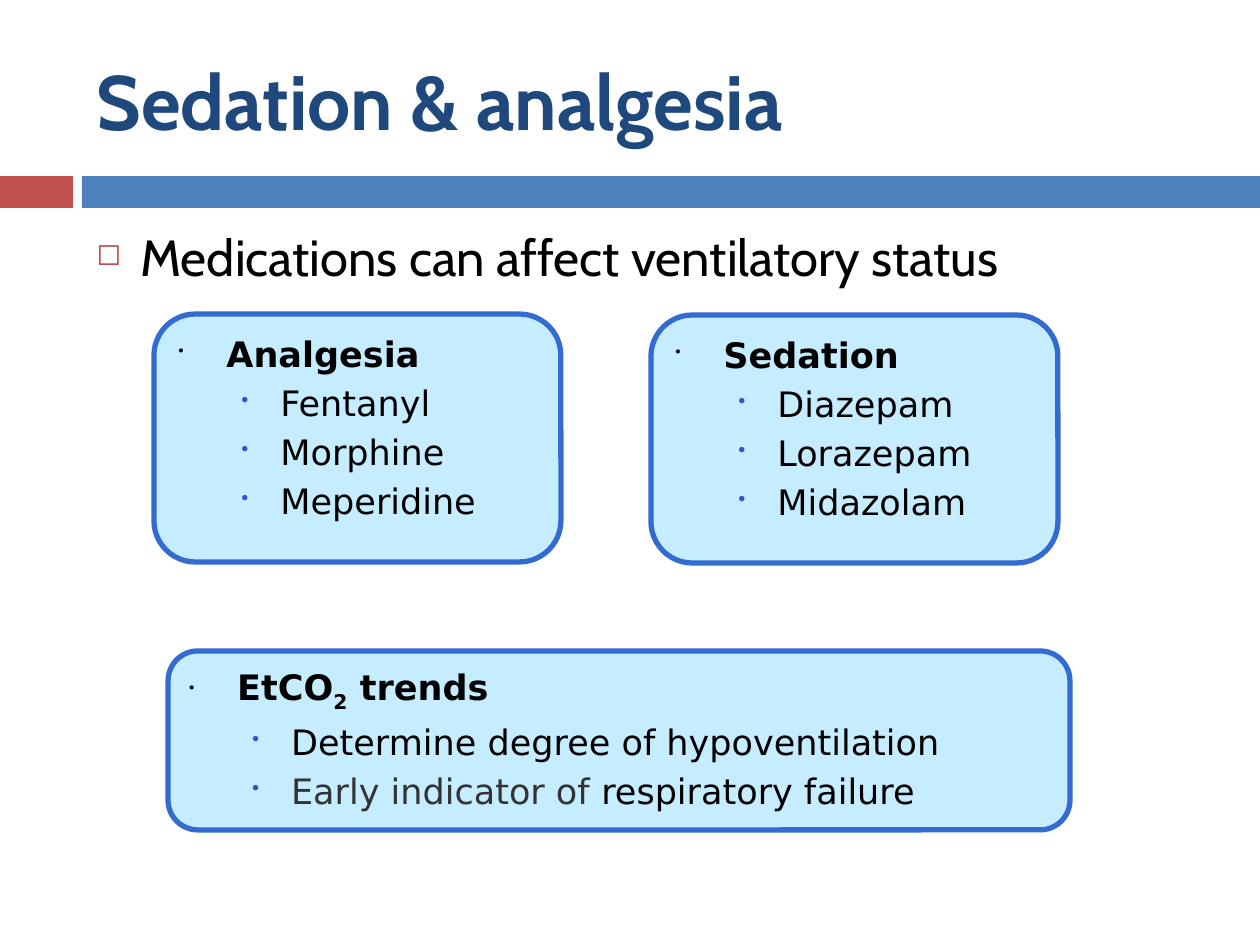
from dataclasses import dataclass

from lxml import etree
from pptx import Presentation
from pptx.dml.color import RGBColor
from pptx.enum.shapes import MSO_SHAPE
from pptx.enum.text import MSO_ANCHOR, MSO_AUTO_SIZE, PP_ALIGN
from pptx.oxml.ns import qn
from pptx.util import Pt

RECTANGLE = MSO_SHAPE.RECTANGLE
ROUNDED = MSO_SHAPE.ROUNDED_RECTANGLE
TOP, MIDDLE = MSO_ANCHOR.TOP, MSO_ANCHOR.MIDDLE
LEFT = PP_ALIGN.LEFT
NO_AUTOFIT = MSO_AUTO_SIZE.NONE
PX = 914400 // 126


@dataclass(frozen=True)
class Theme:
    title_font: str = "Cabin"
    card_font: str = "DejaVu Sans"
    title_size: int = 44
    body_size: int = 29
    card_size: int = 20
    title: str = "1F497D"
    text: str = "000000"
    muted: str = "333333"
    accent: str = "C0504D"
    band: str = "4F81BD"
    card: str = "C5ECFF"
    card_line: str = "336BD1"
    card_bullet: str = "3951CB"


class SlideBuilder:
    def __init__(self, deck, theme):
        self.theme = theme
        self.slide = deck.slides.add_slide(deck.slide_layouts[5])

    def format_run(self, span, font, size, color, bold=False):
        span.font.name = font
        span.font.size = Pt(size)
        span.font.bold = bold
        span.font.color.rgb = RGBColor.from_string(color)

    def format_bullet(self, para, char, size, margin, hanging, before, color=None):
        para.alignment = LEFT
        properties = para._p.get_or_add_pPr()
        properties.set("marL", str(margin * PX))
        properties.set("indent", str(-hanging * PX))
        spacing = etree.SubElement(properties, qn("a:spcBef"))
        tag, value = before
        etree.SubElement(spacing, qn(tag), val=str(value))
        if color:
            bullet_color = etree.SubElement(properties, qn("a:buClr"))
            etree.SubElement(bullet_color, qn("a:srgbClr"), val=color)
        etree.SubElement(properties, qn("a:buSzPct"), val=str(size * 1000))
        etree.SubElement(properties, qn("a:buChar"), char=char)

    def shape(self, kind, left, top, width, height, fill):
        box = self.slide.shapes.add_shape(
            kind, left * PX, top * PX, width * PX, height * PX)
        box.shadow.inherit = False
        box.fill.solid()
        box.fill.fore_color.rgb = RGBColor.from_string(fill)
        return box

    def band(self, left, width, fill):
        self.shape(RECTANGLE, left, 176, width, 32, fill).line.fill.background()

    def title(self, text, left, top, width, height):
        box = self.slide.shapes.title
        box.left, box.top = left * PX, top * PX
        box.width, box.height = width * PX, height * PX
        frame = box.text_frame
        frame.text = text
        frame.auto_size = NO_AUTOFIT
        frame.vertical_anchor = MIDDLE
        para = frame.paragraphs[0]
        para.alignment = LEFT
        self.format_run(para.runs[0], self.theme.title_font,
                        self.theme.title_size, self.theme.title, True)

    def body(self, text, left, top, width, height):
        box = self.slide.shapes.add_textbox(
            left * PX, top * PX, width * PX, height * PX)
        frame = box.text_frame
        frame.word_wrap = True
        frame.text = text
        para = frame.paragraphs[0]
        self.format_bullet(para, "◻", 60, 44, 44, ("a:spcPts", 700),
                           self.theme.accent)
        self.format_run(para.runs[0], self.theme.title_font,
                        self.theme.body_size, self.theme.text)

    def card(self, left, top, width, height, lines):
        theme = self.theme
        box = self.shape(ROUNDED, left, top, width, height, theme.card)
        box.line.color.rgb = RGBColor.from_string(theme.card_line)
        box.line.width = Pt(3)
        frame = box.text_frame
        frame.word_wrap = True
        frame.vertical_anchor = TOP
        for index, parts in enumerate(lines):
            heading = index == 0
            para = frame.paragraphs[0] if heading else frame.add_paragraph()
            before = ("a:spcPct", 20000)
            if heading:
                self.format_bullet(para, "•", 45, 48, 48, before)
            else:
                para.level = 1
                self.format_bullet(para, "•", 60, 102, 39, before,
                                   theme.card_bullet)
            for text, style in parts:
                span = para.add_run()
                span.text = text
                color = theme.muted if style == "muted" else theme.text
                self.format_run(span, theme.card_font, theme.card_size,
                                color, heading)
                if style == "subscript":
                    span.font._element.set("baseline", "-25000")


def plain(*texts):
    return [[(text, "normal")] for text in texts]


def main():
    deck = Presentation()
    deck.slide_width, deck.slide_height = 1260 * PX, 945 * PX
    theme = Theme()
    builder = SlideBuilder(deck, theme)
    builder.band(0, 73, theme.accent)
    builder.band(82, 1178, theme.band)
    builder.title("Sedation & analgesia", 84, 32, 1124, 136)
    builder.body("Medications can affect ventilatory status", 84, 220, 1124, 620)
    builder.card(154, 314, 407, 248,
                 plain("Analgesia", "Fentanyl", "Morphine", "Meperidine"))
    builder.card(651, 315, 407, 248,
                 plain("Sedation", "Diazepam", "Lorazepam", "Midazolam"))
    trends = [
        [("EtCO", "normal"), ("2", "subscript"), (" trends", "normal")],
        *plain("Determine degree of hypoventilation"),
        [("Early indicator of", "muted"), (" respiratory failure", "normal")],
    ]
    builder.card(168, 651, 902, 179, trends)
    deck.save("out.pptx")


if __name__ == "__main__":
    main()
